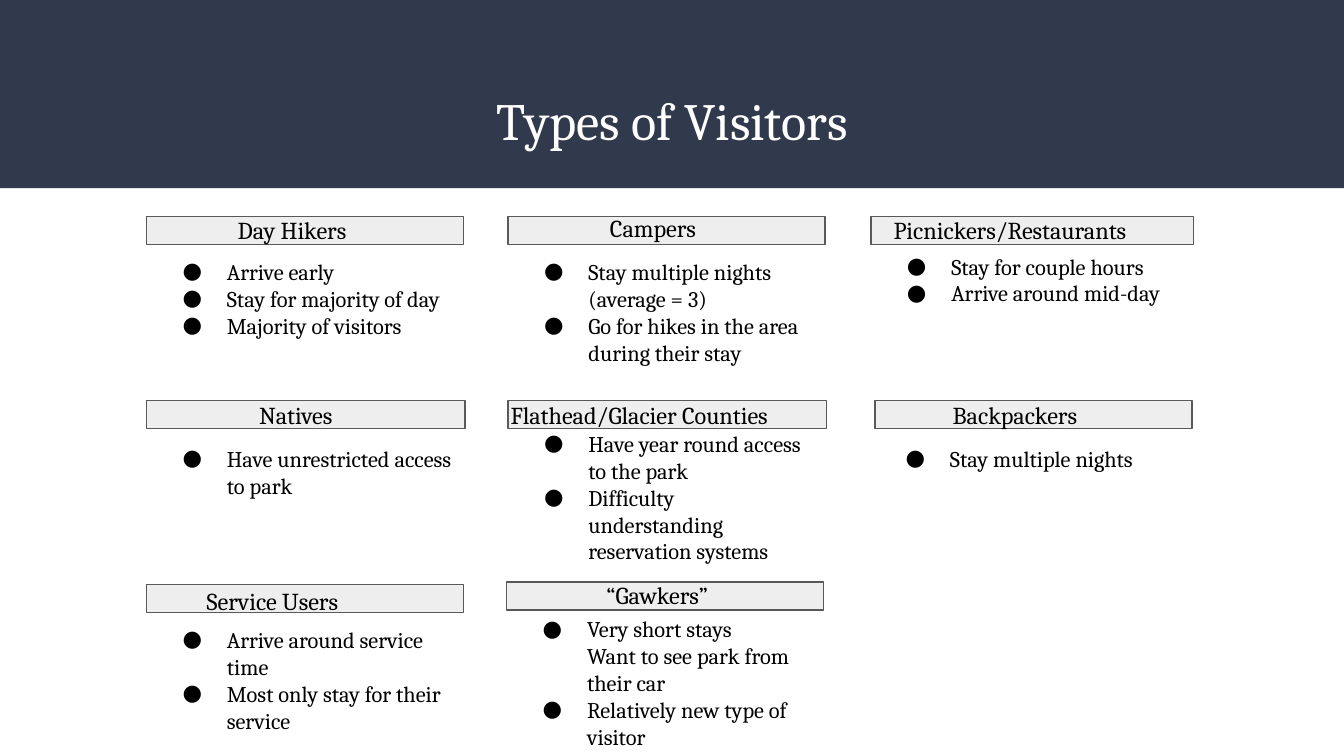
from lxml import etree
from pptx import Presentation
from pptx.dml.color import RGBColor
from pptx.enum.shapes import MSO_SHAPE
from pptx.enum.text import MSO_ANCHOR, MSO_AUTO_SIZE, PP_ALIGN
from pptx.oxml.ns import qn
from pptx.util import Inches, Pt

RECT = MSO_SHAPE.RECTANGLE
MIDDLE = MSO_ANCHOR.MIDDLE
GROW = MSO_AUTO_SIZE.SHAPE_TO_FIT_TEXT
LEFT, CENTER = PP_ALIGN.LEFT, PP_ALIGN.CENTER

FONT = "Cambria"
NAVY, WHITE, BLACK = "31394D", "FFFFFF", "000000"
GRAY, EDGE = "EEEEEE", "595959"
TITLE = "Types of Visitors"

CARDS = [
    ("Day Hikers", LEFT, (1.67, 1.5, 1.19), (1.09, 1.82, 2.36, 0.93),
     ["Arrive early", "Stay for majority of day", "Majority of visitors"]),
    ("Campers", LEFT, (4.44, 1.49, 1.05), (3.78, 1.82, 2.36, 1.13),
     ["Stay multiple nights (average = 3)",
      "Go for hikes in the area during their stay"]),
    ("Picnickers/Restaurants", LEFT, (6.55, 1.5, 2.29), (6.48, 1.78, 2.4, 0.72),
     ["Stay for couple hours", "Arrive around mid-day"]),
    ("Natives", LEFT, (1.83, 2.88, 0.9), (1.09, 3.21, 2.38, 0.84),
     ["Have unrestricted access to park"]),
    ("Flathead/Glacier Counties", LEFT, (3.7, 2.88, 2.72), (3.78, 3.1, 2.37, 1.45),
     ["Have year round access to the park",
      "Difficulty understanding reservation systems"]),
    ("Backpackers", LEFT, (6.99, 2.88, 1.4), (6.47, 3.21, 2.44, 0.4),
     ["Stay multiple nights"]),
    ("Service Users", LEFT, (1.44, 4.26, 1.46), (1.09, 4.56, 2.36, 1.25),
     ["Arrive around service time", "Most only stay for their service"]),
    ("“Gawkers”", CENTER, (4.19, 4.22, 1.4), (3.77, 4.48, 2.36, 1.21),
     ["Very short stays\nWant to see park from their car",
      "Relatively new type of visitor"]),
]
COLS = 3
GRID_X, GRID_Y = 1.09, 1.61
STEP_X, STEP_Y = 2.69, 1.37
BAR_W, BAR_H = 2.36, 0.21
HEAD_H = 0.42
NUDGE = {
    "Picnickers/Restaurants": (0.01, 0, 0.04),
    "Natives": (0, 0, 0.01),
    "Flathead/Glacier Counties": (0, 0, 0.01),
    "Backpackers": (0.04, 0, 0),
    "“Gawkers”": (-0.01, -0.02, 0),
}


def color(code):
    return RGBColor.from_string(code)


def add_bar(slide, box, fill, line=None):
    bar = slide.shapes.add_shape(RECT, *map(Inches, box))
    bar.shadow.inherit = False
    bar.fill.solid()
    bar.fill.fore_color.rgb = color(fill)
    if line:
        bar.line.color.rgb = color(line)
        bar.line.width = Pt(0.75)
    else:
        bar.line.fill.background()
    return bar


def fill_text(frame, lines, size, ink, align):
    frame.word_wrap = True
    frame.margin_left = frame.margin_right = Inches(0.1)
    frame.margin_top = frame.margin_bottom = Inches(0.1)
    for i, line in enumerate(lines):
        para = frame.add_paragraph() if i else frame.paragraphs[0]
        para.text = line
        para.alignment = align
        para.font.name = FONT
        para.font.size = Pt(size)
        para.font.color.rgb = color(ink)


def add_text(slide, box, lines, size, align=LEFT):
    frame = slide.shapes.add_textbox(*map(Inches, box)).text_frame
    fill_text(frame, lines, size, BLACK, align)
    frame.auto_size = GROW
    return frame


def add_bullet(para):
    props = para._p.get_or_add_pPr()
    props.set("marL", str(Inches(0.5)))
    props.set("indent", str(Inches(-0.33)))
    tint = etree.Element(qn("a:buClr"))
    etree.SubElement(tint, qn("a:srgbClr"), val=BLACK)
    face = etree.Element(qn("a:buFont"), typeface=FONT)
    mark = etree.Element(qn("a:buChar"), char="●")
    for i, part in enumerate((tint, face, mark)):
        props.insert(i, part)


def main():
    deck = Presentation()
    deck.slide_width = Inches(10)
    deck.slide_height = deck.slide_width * 9 // 16
    slide = deck.slides.add_slide(deck.slide_layouts[5])

    band = add_bar(slide, (0, 0, 10, 1.4), NAVY)
    title = slide.shapes.title
    title._element.addprevious(band._element)
    title.left, title.top = Inches(0.34), Inches(0.55)
    title.width, title.height = Inches(9.32), Inches(0.68)
    fill_text(title.text_frame, [TITLE], 28, WHITE, CENTER)
    title.text_frame.vertical_anchor = MIDDLE

    for i, (head, align, spot, area, items) in enumerate(CARDS):
        row, col = divmod(i, COLS)
        dx, dy, dw = NUDGE.get(head, (0, 0, 0))
        x = GRID_X + col * STEP_X + dx
        y = GRID_Y + row * STEP_Y + dy
        add_bar(slide, (x, y, BAR_W + dw, BAR_H), GRAY, EDGE)
        add_text(slide, (*spot, HEAD_H), [head], 13, align)
        frame = add_text(slide, area, items, 12)
        for para in frame.paragraphs:
            add_bullet(para)

    deck.save("out.pptx")


if __name__ == "__main__":
    main()
